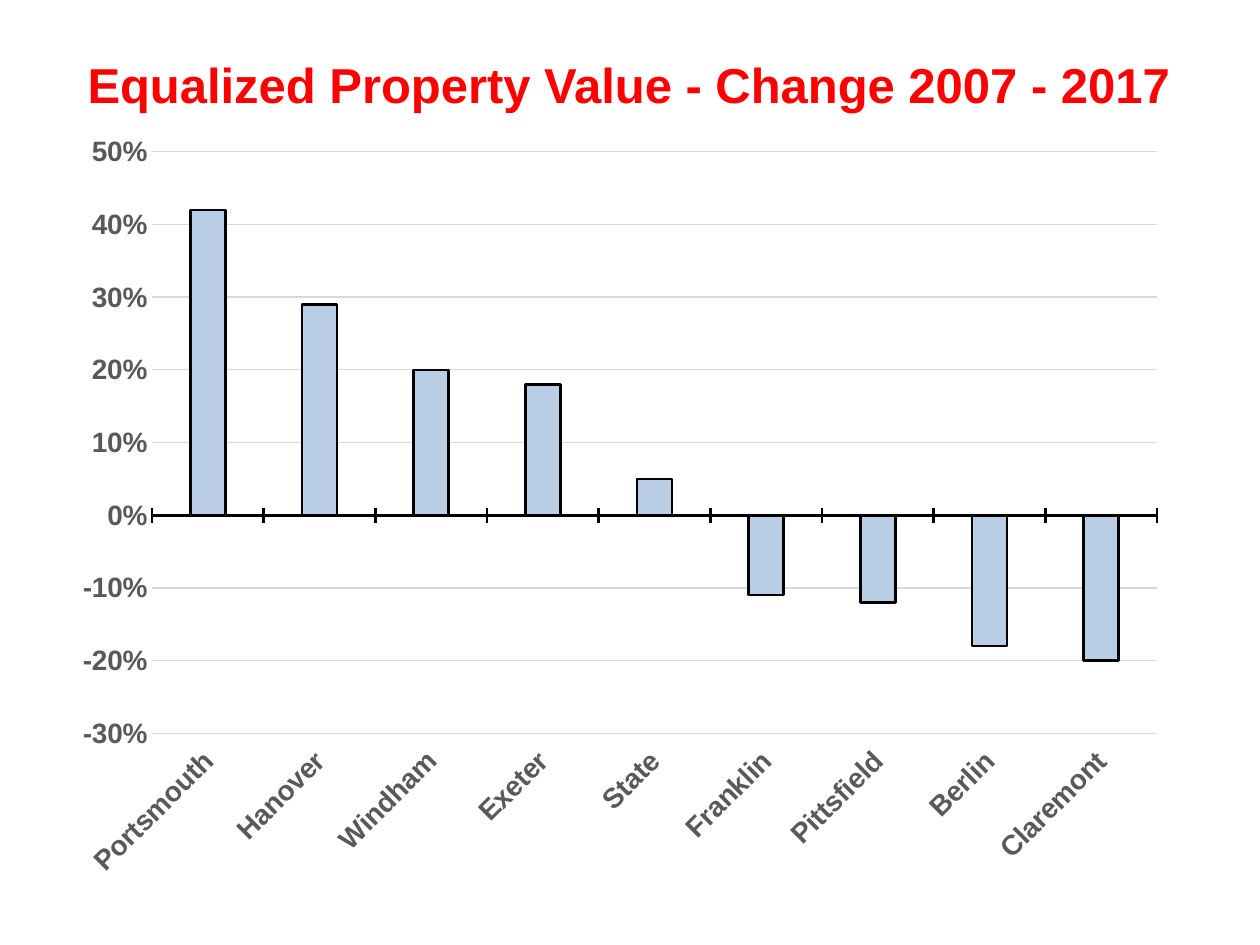
from lxml.etree import SubElement as Sub
from pptx import Presentation
from pptx.chart.data import CategoryChartData as Data
from pptx.dml.color import RGBColor as RGB
from pptx.enum.chart import (XL_CHART_TYPE as Kind, XL_TICK_LABEL_POSITION as Label,
                             XL_TICK_MARK as Tick)
from pptx.enum.text import MSO_ANCHOR as Anchor, MSO_AUTO_SIZE as Fit, PP_ALIGN as Align
from pptx.oxml.ns import qn
from pptx.util import Pt

RED = RGB(0xFF, 0x00, 0x00)
BLACK = RGB(0x00, 0x00, 0x00)
GRAY = RGB(0x59, 0x59, 0x59)
PALE = RGB(0xD9, 0xD9, 0xD9)
BLUE = RGB(0xB9, 0xCD, 0xE5)
FACE = "Arial"

RATES = {
    "Portsmouth": 0.42, "Hanover": 0.29, "Windham": 0.2,
    "Exeter": 0.18, "State": 0.05, "Franklin": -0.11,
    "Pittsfield": -0.12, "Berlin": -0.18, "Claremont": -0.2,
}


def style(font, size, color, bold=True):
    font.name, font.size, font.bold = FACE, Pt(size), bold
    font.color.rgb = color


def stroke(line, color, width):
    line.color.rgb = color
    line.width = Pt(width)


def set_title(slide, box, text):
    title = slide.shapes.title
    title.left, title.top, title.width, title.height = map(Pt, box)
    frame = title.text_frame
    frame.text = text
    frame.word_wrap = True
    frame.auto_size = Fit.NONE
    frame.vertical_anchor = Anchor.MIDDLE
    frame.margin_left = frame.margin_right = Pt(3.6)
    frame.margin_top = frame.margin_bottom = Pt(3.6)
    para = frame.paragraphs[0]
    para.alignment = Align.CENTER
    style(para.font, 28, RED)


def set_plot(chart, box):
    area = chart._chartSpace.chart.plotArea
    old = area.find(qn("c:layout"))
    if old is not None:
        area.remove(old)
    layout = area.makeelement(qn("c:layout"))
    area.insert(0, layout)
    manual = Sub(layout, qn("c:manualLayout"))
    marks = [("layoutTarget", "inner"), ("xMode", "edge"), ("yMode", "edge")]
    for tag, val in marks + list(zip("xywh", box)):
        Sub(manual, qn("c:" + tag)).set("val", str(val))


def add_bars(slide, box, rates):
    data = Data(number_format="0%")
    data.categories = list(rates)
    data.add_series("Series 1", list(rates.values()))
    chart = slide.shapes.add_chart(Kind.COLUMN_CLUSTERED, *map(Pt, box), data).chart
    chart.has_legend = chart.has_title = False
    style(chart.font, 16, BLACK, False)
    set_plot(chart, (0.105, 0.032, 0.893, 0.758))

    plot = chart.plots[0]
    plot.vary_by_categories = False
    plot.gap_width, plot.overlap = 219, -27
    bars = plot.series[0]
    bars.invert_if_negative = False
    bars.format.fill.solid()
    bars.format.fill.fore_color.rgb = BLUE
    stroke(bars.format.line, BLACK, 1.5)

    names, scale = chart.category_axis, chart.value_axis
    for axis in names, scale:
        style(axis.tick_labels.font, 16, GRAY)
        axis.minor_tick_mark = Tick.NONE
    names.tick_label_position = Label.LOW
    names.major_tick_mark = Tick.CROSS
    names.has_major_gridlines = False
    stroke(names.format.line, BLACK, 1.5)
    body = names._element.find(qn("c:txPr")).find(qn("a:bodyPr"))
    body.set("rot", "-2700000")
    body.set("vert", "horz")

    scale.minimum_scale, scale.maximum_scale = -0.3, 0.5
    scale.major_unit = 0.1
    scale.major_tick_mark = Tick.NONE
    scale.tick_labels.number_format = "0%"
    scale.tick_labels.number_format_is_linked = False
    scale.format.line.fill.background()
    scale.has_major_gridlines = True
    stroke(scale.major_gridlines.format.line, PALE, 0.75)


def main():
    deck = Presentation()
    deck.slide_width, deck.slide_height = Pt(720), Pt(540)
    slide = deck.slides.add_slide(deck.slide_layouts[5])
    set_title(slide, (23, 18.7, 672.5, 58.3),
              "Equalized Property Value - Change 2007 - 2017")
    add_bars(slide, (19.4, 72.7, 643, 438.5), RATES)
    deck.save("out.pptx")


if __name__ == "__main__":
    main()
